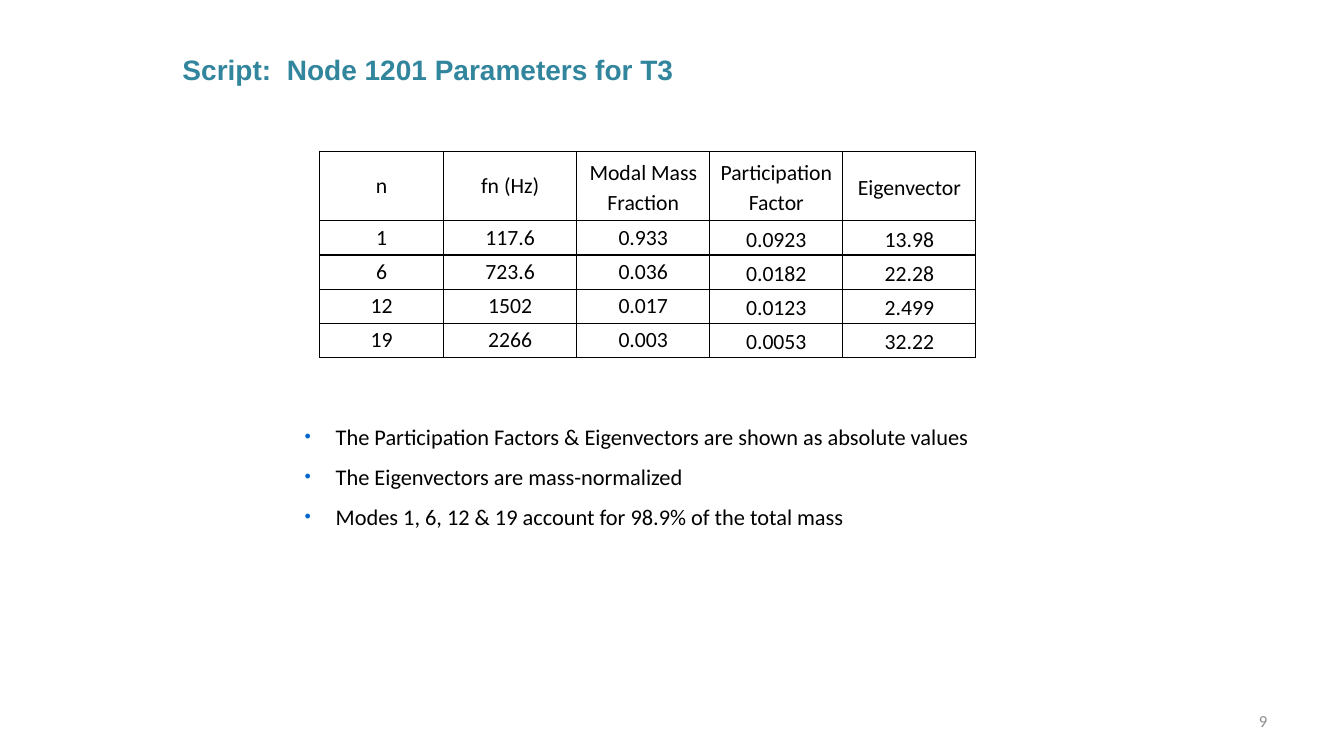
from dataclasses import dataclass

import lxml.etree
import pptx
import pptx.dml.color
import pptx.enum.text
import pptx.oxml
import pptx.oxml.ns
import pptx.util
from pptx.util import Inches

RGBColor = pptx.dml.color.RGBColor
Align = pptx.enum.text.PP_ALIGN
Anchor = pptx.enum.text.MSO_ANCHOR

TEAL = RGBColor(0x31, 0x85, 0x9C)
BLACK = RGBColor(0, 0, 0)
GREY = RGBColor(0x8C, 0x8C, 0x8C)
BULLET_BLUE = RGBColor(0x00, 0x66, 0xCC)


@dataclass
class Style:
    font: str
    size: float
    color: RGBColor
    bold: bool = False
    align: Align = Align.LEFT
    line_spacing: float = 1.0
    margin: float = 0  # space before and after, in points


@dataclass
class Column:
    heading: str
    width: float
    values: tuple[str, ...]
    heading_spacing: float = 1.0
    value_spacing: float = 1.0


TITLE = Style("Arial", 20, TEAL, bold=True, margin=2)
BULLET = Style("Calibri", 16, BLACK, line_spacing=1.5)
NUMBER = Style("Calibri", 12, GREY, align=Align.RIGHT)

COLUMNS = [
    Column("n", 1.23, ("1", "6", "12", "19")),
    Column("fn (Hz)", 1.32, ("117.6", "723.6", "1502", "2266")),
    Column("Modal Mass Fraction", 1.32, ("0.933", "0.036", "0.017", "0.003"), 1.15),
    Column("Participation Factor", 1.32, ("0.0923", "0.0182", "0.0123", "0.0053"), 1.15, 1.15),
    Column("Eigenvector", 1.32, ("13.98", "22.28", "2.499", "32.22"), 1.15, 1.15),
]
ROW_HEIGHTS = [0.69] + [0.34] * 4

NOTES = [
    "The Participation Factors & Eigenvectors are shown as absolute values",
    "The Eigenvectors are mass-normalized",
    "Modes 1, 6, 12 & 19 account for 98.9% of the total mass",
]


def format_text(frame, style: Style) -> None:
    for para in frame.paragraphs:
        para.alignment = style.align
        para.line_spacing = style.line_spacing
        para.space_before = para.space_after = pptx.util.Pt(style.margin)
        for span in para.runs:
            span.font.name = style.font
            span.font.size = pptx.util.Pt(style.size)
            span.font.bold = style.bold
            span.font.color.rgb = style.color


def fill_box(box, place: tuple[float, ...], text: str, style: Style, anchor=Anchor.TOP) -> None:
    box.left, box.top, box.width, box.height = map(Inches, place)
    frame = box.text_frame
    frame.text = text
    frame.word_wrap = True
    frame.auto_size = pptx.enum.text.MSO_AUTO_SIZE.NONE
    frame.vertical_anchor = anchor
    format_text(frame, style)


def add_bullet(para) -> None:
    properties = para._p.get_or_add_pPr()
    properties.set("marL", str(Inches(0.31)))
    properties.set("indent", str(-Inches(0.31)))
    for markup in (
        f'<a:buClr {{ns}}><a:srgbClr val="{BULLET_BLUE}"/></a:buClr>',
        '<a:buSzPct {ns} val="80000"/>',
        '<a:buFont {ns} typeface="Arial"/>',
        '<a:buChar {ns} char="•"/>',
    ):
        properties.append(pptx.oxml.parse_xml(markup.format(ns=pptx.oxml.ns.nsdecls("a"))))


def add_borders(cell) -> None:
    properties = cell._tc.get_or_add_tcPr()
    for side in ("lnL", "lnR", "lnT", "lnB"):
        line = lxml.etree.SubElement(
            properties, pptx.oxml.ns.qn(f"a:{side}"), w=str(pptx.util.Pt(1)))
        fill = lxml.etree.SubElement(line, pptx.oxml.ns.qn("a:solidFill"))
        lxml.etree.SubElement(fill, pptx.oxml.ns.qn("a:srgbClr"), val=str(BLACK))


def fill_cell(cell, text: str, spacing: float) -> None:
    cell.text = text
    cell.vertical_anchor = Anchor.MIDDLE
    cell.margin_left = cell.margin_right = Inches(0.07)
    cell.margin_top = cell.margin_bottom = 0
    format_text(cell.text_frame,
                Style("Calibri", 15.5, BLACK, align=Align.CENTER, line_spacing=spacing))
    add_borders(cell)
    cell.fill.background()


def add_mode_table(page) -> None:
    frame = page.shapes.add_table(
        len(ROW_HEIGHTS), len(COLUMNS), Inches(3.17), Inches(1.5),
        Inches(sum(column.width for column in COLUMNS)), Inches(sum(ROW_HEIGHTS)))
    table = frame.table
    table.first_row = table.horz_banding = False
    for row, height in zip(table.rows, ROW_HEIGHTS):
        row.height = Inches(height)
    for index, column in enumerate(COLUMNS):
        table.columns[index].width = Inches(column.width)
        fill_cell(table.cell(0, index), column.heading, column.heading_spacing)
        for row_index, value in enumerate(column.values, start=1):
            fill_cell(table.cell(row_index, index), value, column.value_spacing)


def main() -> None:
    deck = pptx.Presentation()
    deck.slide_width, deck.slide_height = Inches(13.33), Inches(7.5)
    page = deck.slides.add_slide(deck.slide_layouts[1])

    # Title
    fill_box(page.shapes.title, (1.71, 0.47, 8.17, 0.44),
             "Script:  Node 1201 Parameters for T3", TITLE)

    # Modal parameters
    add_mode_table(page)

    # Notes under the table
    body = page.placeholders[1]
    fill_box(body, (2.92, 4.01, 7.58, 1.31), "\n".join(NOTES), BULLET)
    for para in body.text_frame.paragraphs:
        add_bullet(para)

    # Page number
    number = page.shapes.add_textbox(0, 0, 0, 0)
    fill_box(number, (9.56, 6.95, 3.11, 0.4), "9", NUMBER, Anchor.MIDDLE)

    deck.save("out.pptx")


if __name__ == "__main__":
    main()
